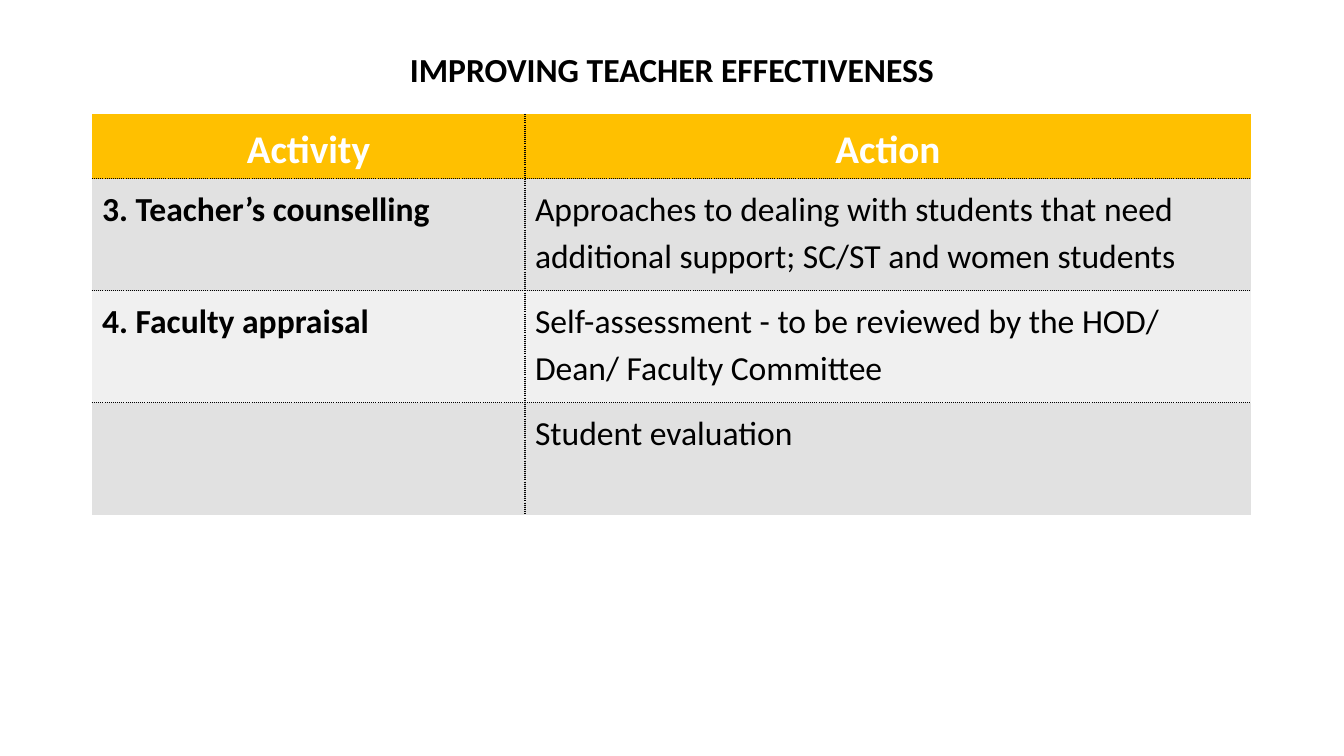
from lxml import etree
from pptx import Presentation
from pptx.dml.color import RGBColor
from pptx.enum.text import MSO_ANCHOR, PP_ALIGN
from pptx.oxml.ns import qn
from pptx.util import Pt

CENTER, LEFT = PP_ALIGN.CENTER, PP_ALIGN.LEFT
MIDDLE = MSO_ANCHOR.MIDDLE
SLIDE_WIDTH, SLIDE_HEIGHT = 12192000, 6858000
SCALE = SLIDE_WIDTH / 1344
TITLE_ONLY = 5

BLACK, WHITE, GOLD = "000000", "FFFFFF", "FFC000"
BANDS = ("E1E1E1", "F0F0F0")

ACTIVITIES = [
    ("Activity", "Action"),
    ("3. Teacher’s counselling",
     "Approaches to dealing with students that need additional support; "
     "SC/ST and women students"),
    ("4. Faculty appraisal",
     "Self-assessment - to be reviewed by the HOD/ Dean/ Faculty Committee"),
    ("", "Student evaluation"),
]


def px(length):
    return round(length * SCALE)


def color(code):
    return RGBColor.from_string(code)


class SlideBuilder:
    font_name = "Calibri"

    def __init__(self, slide):
        self.slide = slide

    def format_text(self, paragraph, size, code, bold, align, spacing):
        paragraph.alignment = align
        paragraph.line_spacing = spacing
        for font in [paragraph.font] + [run.font for run in paragraph.runs]:
            font.name = self.font_name
            font.size = Pt(size)
            font.bold = bold
            font.color.rgb = color(code)

    def title(self, text, left, top, width, height):
        heading = self.slide.shapes.title
        heading.left, heading.top = px(left), px(top)
        heading.width, heading.height = px(width), px(height)
        frame = heading.text_frame
        frame.text = text
        frame.word_wrap = True
        frame.vertical_anchor = MIDDLE
        self.format_text(frame.paragraphs[0], 24, BLACK, True, CENTER, 0.9)

    def border(self, cell, side, visible):
        properties = cell._tc.get_or_add_tcPr()
        line = etree.SubElement(properties, qn(f"a:ln{side}"), w=str(Pt(1)))
        if not visible:
            etree.SubElement(line, qn("a:noFill"))
            return
        fill = etree.SubElement(line, qn("a:solidFill"))
        etree.SubElement(fill, qn("a:srgbClr"), val=BLACK)
        etree.SubElement(line, qn("a:prstDash"), val="sysDot")

    def table(self, rows, left, top, widths, heights):
        grid = self.slide.shapes.add_table(
            len(rows), len(widths), px(left), px(top),
            px(sum(widths)), px(sum(heights))).table
        for column, width in zip(grid.columns, widths):
            column.width = px(width)
        for row, height in zip(grid.rows, heights):
            row.height = px(height)

        last_row, last_column = len(rows) - 1, len(widths) - 1
        for r, texts in enumerate(rows):
            header = r == 0
            for c, text in enumerate(texts):
                cell = grid.cell(r, c)
                # Dotted rules only between cells
                inner = {"L": c > 0, "R": c < last_column,
                         "T": r > 0, "B": r < last_row}
                for side, visible in inner.items():
                    self.border(cell, side, visible)
                cell.fill.solid()
                cell.fill.fore_color.rgb = color(GOLD if header else BANDS[(r - 1) % 2])
                cell.text_frame.text = text
                paragraph = cell.text_frame.paragraphs[0]
                paragraph.space_after = Pt(6)
                self.format_text(paragraph, 28 if header else 24,
                                 WHITE if header else BLACK,
                                 header or c == 0,
                                 CENTER if header else LEFT, 1.14)


def main():
    deck = Presentation()
    deck.slide_width, deck.slide_height = SLIDE_WIDTH, SLIDE_HEIGHT
    builder = SlideBuilder(deck.slides.add_slide(deck.slide_layouts[TITLE_ONLY]))

    # Heading
    builder.title("IMPROVING TEACHER EFFECTIVENESS", 92, 40, 1160, 64)

    # Activities and their actions
    builder.table(ACTIVITIES, 92, 114, (433, 726), (64, 112, 112, 112))

    deck.save("out.pptx")


if __name__ == "__main__":
    main()
